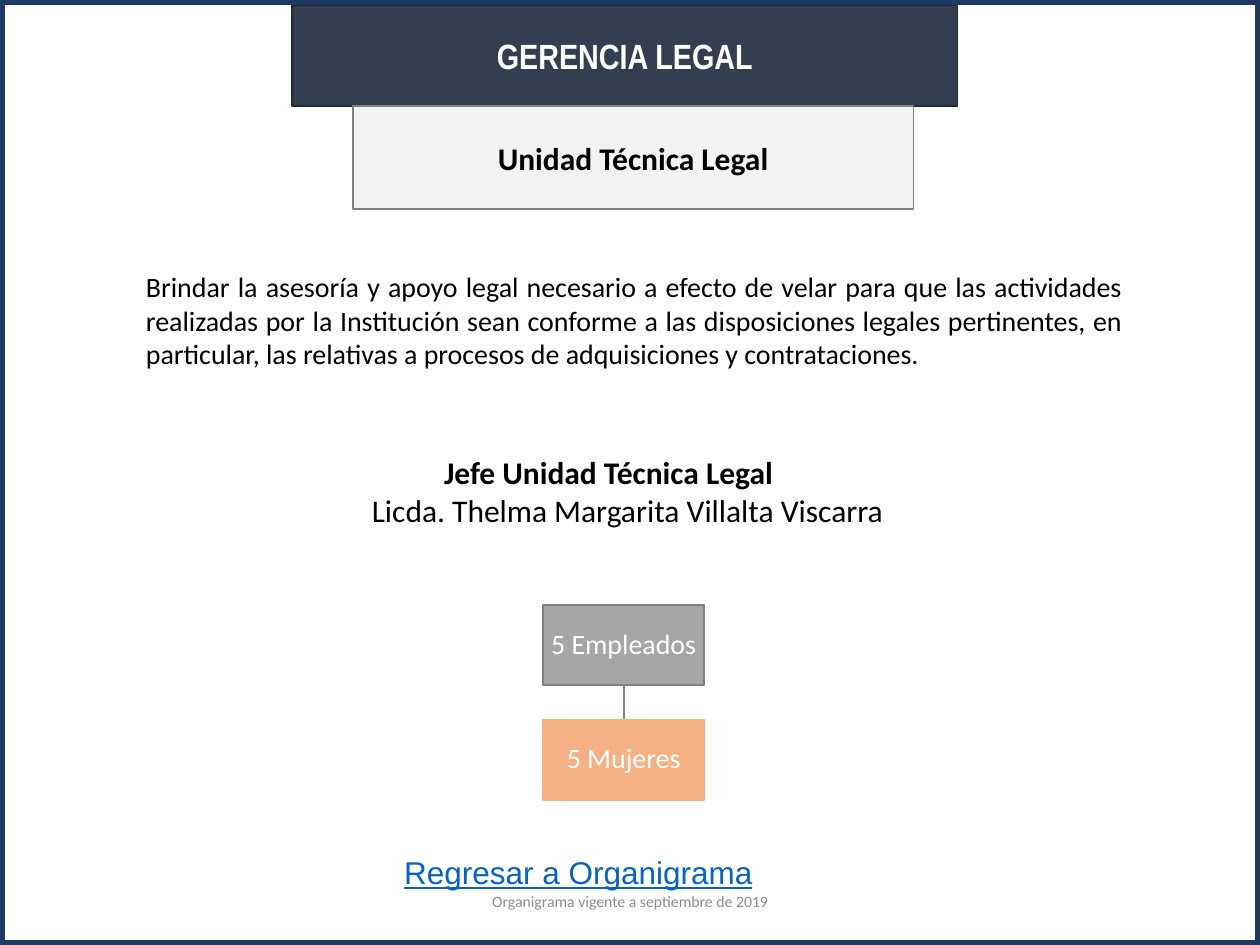
"""Build the legal unit slide with its heading, mission, head and staff chart."""
from dataclasses import dataclass
from typing import Optional

from lxml.etree import SubElement
from pptx import Presentation
from pptx.dml.color import RGBColor
from pptx.enum.shapes import MSO_CONNECTOR, MSO_SHAPE
from pptx.enum.text import MSO_ANCHOR, MSO_AUTO_SIZE, PP_ALIGN
from pptx.oxml.ns import qn
from pptx.util import Inches, Pt

CELL = 0.1
COLUMNS, ROWS = 100, 75


@dataclass(frozen=True)
class Theme:
    """Colours, fonts and type sizes of the slide."""
    border: str = "203864"
    heading: str = "333F50"
    heading_edge: str = "222A35"
    panel: str = "F2F2F2"
    edge: str = "808080"
    staff: str = "A6A6A6"
    women: str = "F4B183"
    link: str = "0563C1"
    footer: str = "8C8C8C"
    dark: str = "000000"
    light: str = "FFFFFF"
    body_font: str = "Calibri"
    title_font: str = "Arial Narrow"
    link_font: str = "Arial"
    title_size: int = 20
    large_size: int = 18
    body_size: int = 16
    footer_size: int = 9


THEME = Theme()


@dataclass(frozen=True)
class Area:
    """Position and size in grid columns and rows."""
    column: float
    row: float
    columns: float
    rows: float


@dataclass(frozen=True)
class Label:
    """Wording and its formatting."""
    text: str
    size: int
    color: str = THEME.dark
    font: str = THEME.body_font
    bold: bool = False
    underline: bool = False
    align: PP_ALIGN = PP_ALIGN.CENTER
    anchor: MSO_ANCHOR = MSO_ANCHOR.MIDDLE
    inset: Optional[float] = None
    spacing: float = 1.0


@dataclass(frozen=True)
class Panel:
    """A filled rectangle with a label."""
    area: Area
    fill: str
    edge: str
    label: Label


def grid(cells: float) -> int:
    """Turn grid cells into a length."""
    return Inches(cells * CELL)


def bounds(area: Area) -> tuple:
    """Return left, top, width and height of an area."""
    return tuple(grid(cells) for cells in (area.column, area.row, area.columns, area.rows))


def write(shape, label: Label) -> None:
    """Put a formatted label in a shape."""
    frame = shape.text_frame
    frame.text = label.text
    frame.word_wrap = True
    frame.auto_size = MSO_AUTO_SIZE.NONE
    frame.vertical_anchor = label.anchor
    if label.inset is not None:
        frame.margin_left = frame.margin_right = Inches(label.inset)
        frame.margin_top = frame.margin_bottom = Inches(label.inset)
    para = frame.paragraphs[0]
    para.alignment = label.align
    para.line_spacing = label.spacing
    font = para.font
    font.name, font.size = label.font, Pt(label.size)
    font.bold, font.underline = label.bold, label.underline
    font.color.rgb = RGBColor.from_string(label.color)


def paint(shape, fill: str, edge: str) -> None:
    """Give a shape its fill and thin outline."""
    shape.fill.solid()
    shape.fill.fore_color.rgb = RGBColor.from_string(fill)
    shape.line.color.rgb = RGBColor.from_string(edge)
    shape.line.width = Pt(1)


def draw_border(page) -> None:
    """Draw the outline around the page."""
    border = page.shapes.add_shape(MSO_SHAPE.RECTANGLE, *bounds(Area(0, 0, COLUMNS, ROWS)))
    border.shadow.inherit = False
    border.fill.background()
    border.line.color.rgb = RGBColor.from_string(THEME.border)
    border.line.width = Pt(6)


def draw_title(page, panel: Panel) -> None:
    """Place and format the title placeholder."""
    title = page.shapes.title
    title.left, title.top, title.width, title.height = bounds(panel.area)
    paint(title, panel.fill, panel.edge)
    write(title, panel.label)


def draw_panel(page, panel: Panel):
    """Draw a labelled rectangle."""
    box = page.shapes.add_shape(MSO_SHAPE.RECTANGLE, *bounds(panel.area))
    box.shadow.inherit = False
    paint(box, panel.fill, panel.edge)
    write(box, panel.label)
    return box


def draw_text(page, area: Area, label: Label) -> None:
    """Draw a text box."""
    write(page.shapes.add_textbox(*bounds(area)), label)


def join(page, upper, lower) -> None:
    """Connect the bottom of one box to the top of another."""
    link = page.shapes.add_connector(MSO_CONNECTOR.STRAIGHT, 0, 0, 0, 0)
    link.begin_connect(upper, 2)
    link.end_connect(lower, 0)
    link.line.color.rgb = RGBColor.from_string(THEME.edge)
    link.line.width = Pt(1)
    SubElement(link._element.spPr, qn("a:effectLst"))


def staff_panel(level: int, text: str, fill: str, edge: str) -> Panel:
    """Describe one level of the staff chart."""
    label = Label(text, THEME.body_size, THEME.light, inset=0.01, spacing=0.9)
    return Panel(Area(43.1, 48 + level * 9.1, 12.8, 6.4), fill, edge, label)


HEADING = Panel(Area(23.2, 0.4, 52.8, 8), THEME.heading, THEME.heading_edge,
                Label("GERENCIA LEGAL", THEME.title_size, THEME.light, THEME.title_font, bold=True))
UNIT = Panel(Area(28, 8.4, 44.5, 8.2), THEME.panel, THEME.edge,
             Label("Unidad Técnica Legal", THEME.large_size, bold=True))
STAFF = (staff_panel(0, "5 Empleados", THEME.staff, THEME.edge),
         staff_panel(1, "5 Mujeres", THEME.women, THEME.women))
TEXTS = (
    (Area(10.6, 20.9, 79.5, 9.1),
     Label("Brindar la asesoría y apoyo legal necesario a efecto de velar para que las actividades "
           "realizadas por la Institución sean conforme a las disposiciones legales pertinentes, "
           "en particular, las relativas a procesos de adquisiciones y contrataciones.",
           THEME.body_size, align=PP_ALIGN.JUSTIFY, anchor=MSO_ANCHOR.TOP)),
    (Area(23.7, 35.5, 49.2, 4),
     Label("Jefe Unidad Técnica Legal", THEME.large_size, bold=True, anchor=MSO_ANCHOR.TOP)),
    (Area(25.2, 38.5, 49.2, 4),
     Label("Licda. Thelma Margarita Villalta Viscarra", THEME.large_size, anchor=MSO_ANCHOR.TOP)),
    (Area(31.1, 67.2, 32.7, 4),
     Label("Regresar a Organigrama", THEME.large_size, THEME.link, THEME.link_font,
           underline=True, align=PP_ALIGN.LEFT, anchor=MSO_ANCHOR.TOP)),
    (Area(33.1, 69.5, 33.8, 4),
     Label("Organigrama vigente a septiembre de 2019", THEME.footer_size, THEME.footer)),
)


def main() -> None:
    """Build and save the deck."""
    deck = Presentation()
    deck.slide_width, deck.slide_height = grid(COLUMNS), grid(ROWS)
    page = deck.slides.add_slide(deck.slide_layouts[5])
    draw_border(page)
    draw_title(page, HEADING)
    draw_panel(page, UNIT)
    join(page, *(draw_panel(page, panel) for panel in STAFF))
    for area, label in TEXTS:
        draw_text(page, area, label)
    deck.save("out.pptx")


if __name__ == "__main__":
    main()
